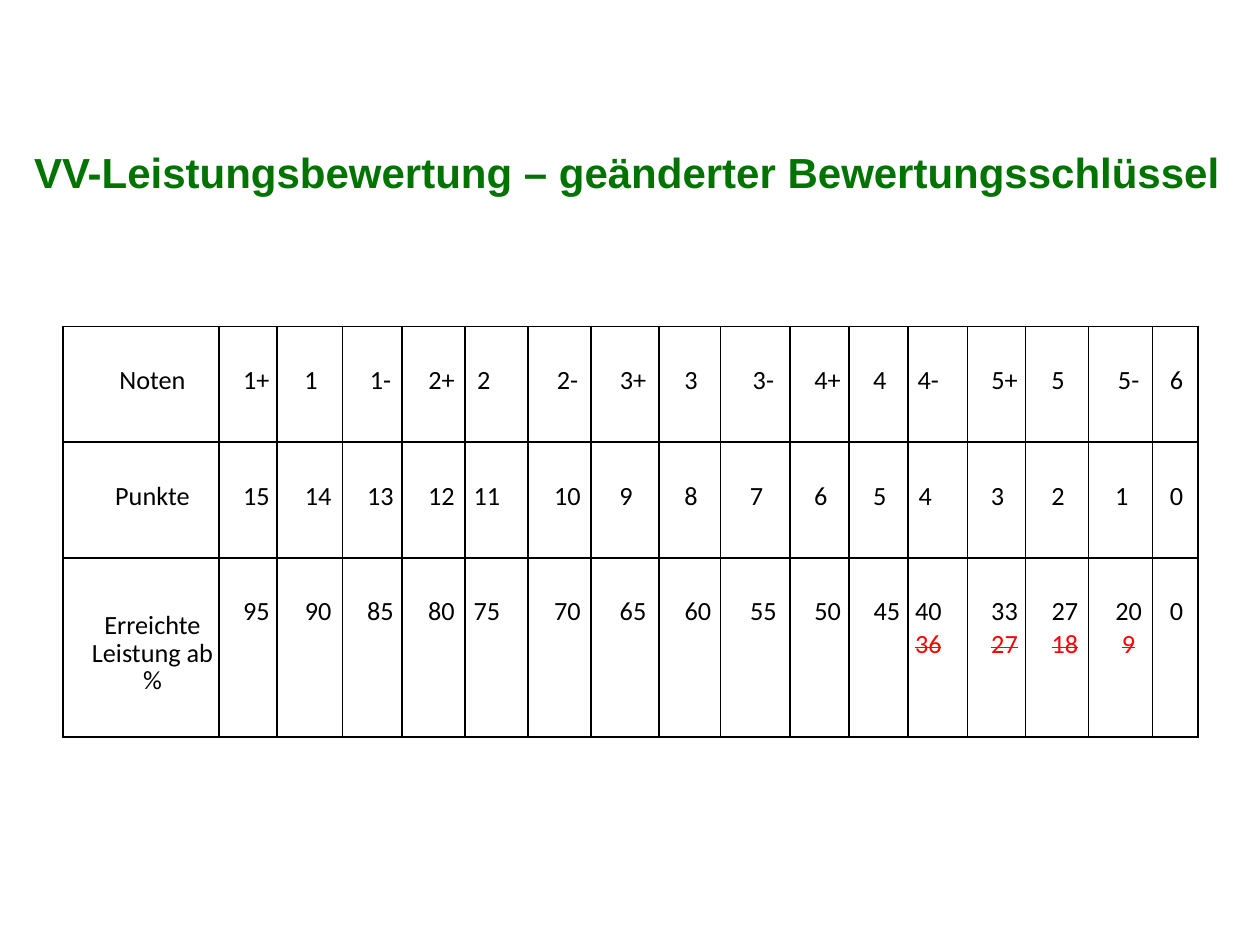
from lxml.etree import SubElement
from pptx import Presentation
from pptx.dml.color import RGBColor
from pptx.enum.text import MSO_ANCHOR as Anchor, MSO_AUTO_SIZE as AutoSize, PP_ALIGN as Align
from pptx.oxml.ns import qn
from pptx.util import Inches, Pt

BLACK, RED, GREEN = "000000", "FF0000", "007300"
CELL_FONT = {"name": "Calibri", "size": Pt(15), "bold": False}
TITLE_FONT = {"name": "Arial", "size": Pt(24), "bold": True}


def style_font(font, values, colour):
    for attribute, value in values.items():
        setattr(font, attribute, value)
    font.color.rgb = RGBColor.from_string(colour)


def draw_borders(cell, colour):
    properties = cell._tc.get_or_add_tcPr()
    for side in ("lnL", "lnR", "lnT", "lnB"):
        line = SubElement(properties, qn(f"a:{side}"), w=str(Pt(1)))
        fill = SubElement(line, qn("a:solidFill"))
        SubElement(fill, qn("a:srgbClr"), val=colour)


prs = Presentation()
prs.slide_width, prs.slide_height = Inches(10), Inches(7.5)
slide = prs.slides.add_slide(prs.slide_layouts[5])

# Heading
heading = slide.shapes.title
heading.left, heading.top = Inches(-0.12), Inches(0.27)
heading.width, heading.height = Inches(10.12), Inches(3.19)
heading_format = {
    "auto_size": AutoSize.NONE, "word_wrap": True, "vertical_anchor": Anchor.TOP,
    "margin_left": Inches(0.39), "margin_right": Inches(0.1),
    "margin_top": Inches(0.89), "margin_bottom": 0,
}
for attribute, value in heading_format.items():
    setattr(heading.text_frame, attribute, value)
heading.text_frame.text = "VV-Leistungsbewertung – geänderter Bewertungsschlüssel"
heading_line = heading.text_frame.paragraphs[0]
heading_line.alignment = Align.LEFT
style_font(heading_line.runs[0].font, TITLE_FONT, GREEN)

# Grading key: one column per grade, points counting down from 15
grades = [f"{grade}{sign}" for grade in range(1, 6) for sign in ("+", "", "-")] + ["6"]
points = [str(point) for point in range(15, -1, -1)]
percents = [str(percent) for percent in range(95, 35, -5)] + ["33", "27", "20", "0"]
old_percents = {"4-": "36", "5+": "27", "5": "18", "5-": "9"}
left_leaning = ("2", "4-")

grading_rows = [
    ["Noten"] + grades,
    ["Punkte"] + points,
    ["Erreichte Leistung ab %"] + percents,
]
column_widths = [1.24, 0.46, 0.52, 0.47, 0.5, 0.5, 0.5, 0.54, 0.49,
                 0.55, 0.47, 0.47, 0.47, 0.46, 0.5, 0.51, 0.36]
row_heights = [0.92, 0.92, 1.42]

grading = slide.shapes.add_table(
    len(row_heights), len(column_widths), Inches(0.5), Inches(2.59),
    Inches(sum(column_widths)), Inches(sum(row_heights))).table
grading.first_row = grading.horz_banding = False
for column, width in zip(grading.columns, column_widths):
    column.width = Inches(width)
for row, height in zip(grading.rows, row_heights):
    row.height = Inches(height)

for row_index, entries in enumerate(grading_rows):
    is_percent_row = row_index == 2
    for column_index, entry in enumerate(entries):
        cell = grading.cell(row_index, column_index)
        grade = grading_rows[0][column_index]
        is_label = column_index == 0
        indent = 0.18 if is_label else 0.13 if len(entry) == 2 else 0.02
        leans_left = grade in left_leaning
        cell_format = {
            "margin_left": 0 if leans_left else Inches(indent),
            "margin_right": Inches(0.15 if len(entry) == 2 else 0.2) if leans_left else 0,
            "margin_top": Inches(0.43 if is_label and is_percent_row else 0.3),
            "margin_bottom": 0,
            "vertical_anchor": Anchor.TOP,
        }
        for attribute, value in cell_format.items():
            setattr(cell, attribute, value)
        draw_borders(cell, BLACK)
        cell.fill.background()

        cell.text = entry
        current = cell.text_frame.paragraphs[0]
        current.alignment = Align.CENTER
        style_font(current.runs[0].font, CELL_FONT, BLACK)
        if is_percent_row and is_label:
            current.line_spacing = 0.86
        if is_percent_row and grade in old_percents:
            replaced = cell.text_frame.add_paragraph()
            replaced.alignment = Align.CENTER
            struck = replaced.add_run()
            struck.text = old_percents[grade]
            style_font(struck.font, CELL_FONT, RED)
            struck._r.get_or_add_rPr().set("strike", "sngStrike")

prs.save("out.pptx")
